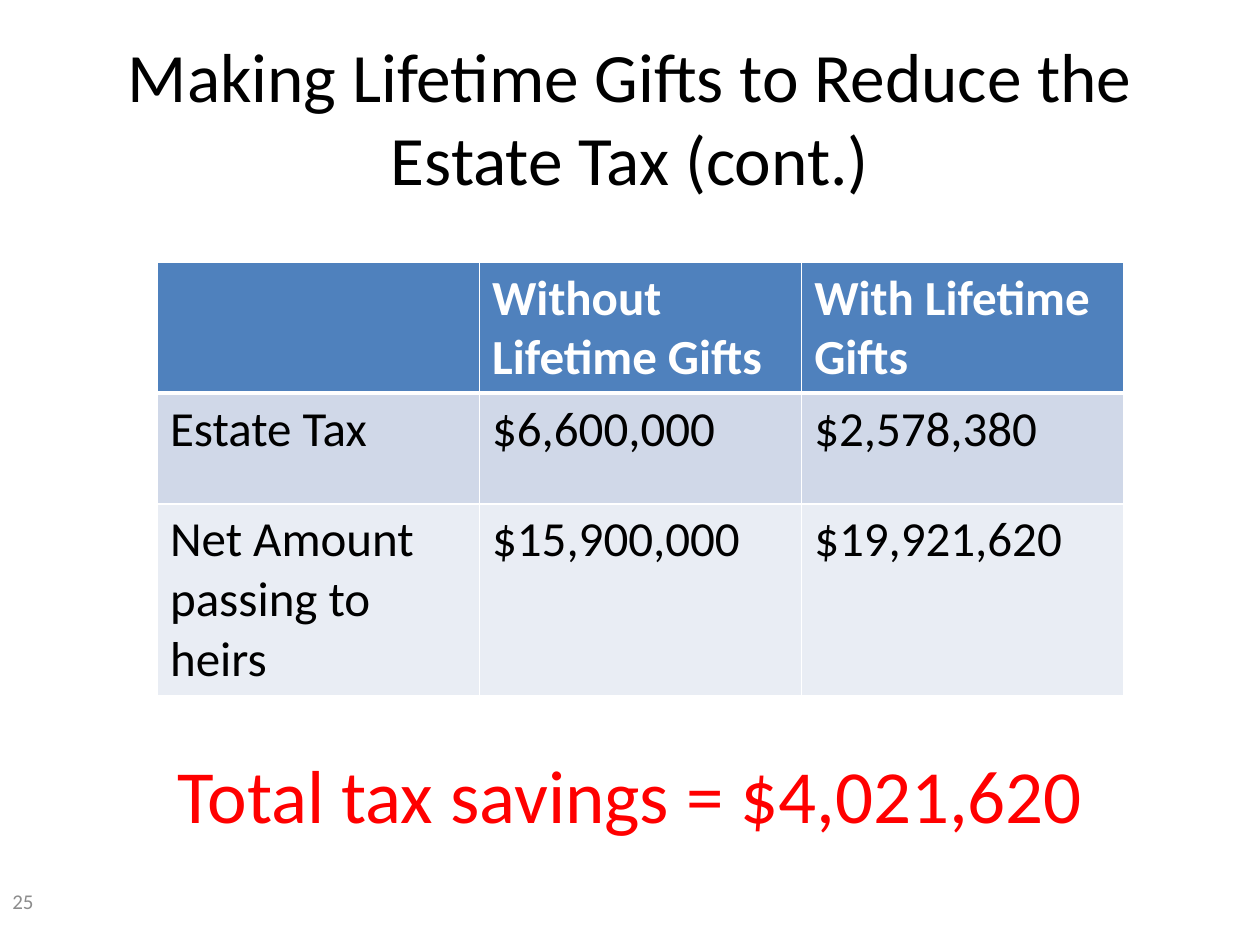
"""Build the slide comparing estate tax with and without lifetime gifts."""
from lxml import etree
from pptx import Presentation
from pptx.dml.color import RGBColor
from pptx.enum.text import MSO_ANCHOR, PP_ALIGN
from pptx.oxml.ns import qn
from pptx.util import Inches, Pt

MIDDLE = MSO_ANCHOR.MIDDLE
LEFT, CENTER = PP_ALIGN.LEFT, PP_ALIGN.CENTER
BLACK = RGBColor(0x00, 0x00, 0x00)
WHITE = RGBColor(0xFF, 0xFF, 0xFF)
RED = RGBColor(0xFF, 0x00, 0x00)
GRAY = RGBColor(0x8C, 0x8C, 0x8C)
HEADER_BLUE = RGBColor(0x4F, 0x81, 0xBD)
BAND_DARK = RGBColor(0xD0, 0xD8, 0xE8)
BAND_LIGHT = RGBColor(0xE9, 0xED, 0xF4)
FONT = "Calibri"

TEXTS = [
    ("Making Lifetime Gifts to Reduce the Estate Tax (cont.)",
     (0.5, 0.3, 9, 1.25), 39.6, BLACK, CENTER),
    ("25", (0, 6.95, 2.33, 0.4), 12, GRAY, LEFT),
    ("Total tax savings = $4,021,620",
     (0.5, 5.67, 9, 1.25), 42.9, RED, CENTER),
]
COMPARISON = [
    ("", "Without Lifetime Gifts", "With Lifetime Gifts"),
    ("Estate Tax", "$6,600,000", "$2,578,380"),
    ("Net Amount passing to heirs", "$15,900,000", "$19,921,620"),
]
ROW_HEIGHTS = [1.04, 0.88, 1.52]
ROW_FILLS = [HEADER_BLUE, BAND_DARK, BAND_LIGHT]
TABLE_LEFT, TABLE_TOP, TABLE_WIDTH = 1.25, 2.08, 7.67


def style(paragraph, size, color, bold=False):
    font = paragraph.font
    font.name, font.size, font.bold = FONT, Pt(size), bold
    font.color.rgb = color


def add_text(slide, text, box, size, color, align):
    frame = slide.shapes.add_textbox(*map(Inches, box)).text_frame
    frame.word_wrap = True
    frame.vertical_anchor = MIDDLE
    paragraph = frame.paragraphs[0]
    paragraph.text, paragraph.alignment = text, align
    style(paragraph, size, color)


def add_borders(cell, widths):
    properties = cell._tc.get_or_add_tcPr()
    for side, width in zip("LRTB", widths):
        line = etree.SubElement(properties, qn(f"a:ln{side}"), w=str(Pt(width)))
        fill = etree.SubElement(line, qn("a:solidFill"))
        etree.SubElement(fill, qn("a:srgbClr"), val=str(WHITE))


def add_comparison(slide):
    table = slide.shapes.add_table(
        len(COMPARISON), len(COMPARISON[0]), Inches(TABLE_LEFT),
        Inches(TABLE_TOP), Inches(TABLE_WIDTH), Inches(sum(ROW_HEIGHTS))).table
    for r, (values, height, fill) in enumerate(zip(COMPARISON, ROW_HEIGHTS, ROW_FILLS)):
        table.rows[r].height = Inches(height)
        header = r == 0
        for c, value in enumerate(values):
            cell = table.cell(r, c)
            cell.text = value
            style(cell.text_frame.paragraphs[0], 28, WHITE if header else BLACK, header)
            add_borders(cell, (1, 1, 3 if r == 1 else 1, 3 if header else 1))
            cell.fill.solid()
            cell.fill.fore_color.rgb = fill


def main():
    presentation = Presentation()
    presentation.slide_width, presentation.slide_height = Inches(10), Inches(7.5)
    slide = presentation.slides.add_slide(presentation.slide_layouts[6])
    for entry in TEXTS:
        add_text(slide, *entry)
    add_comparison(slide)
    presentation.save("out.pptx")


if __name__ == "__main__":
    main()
